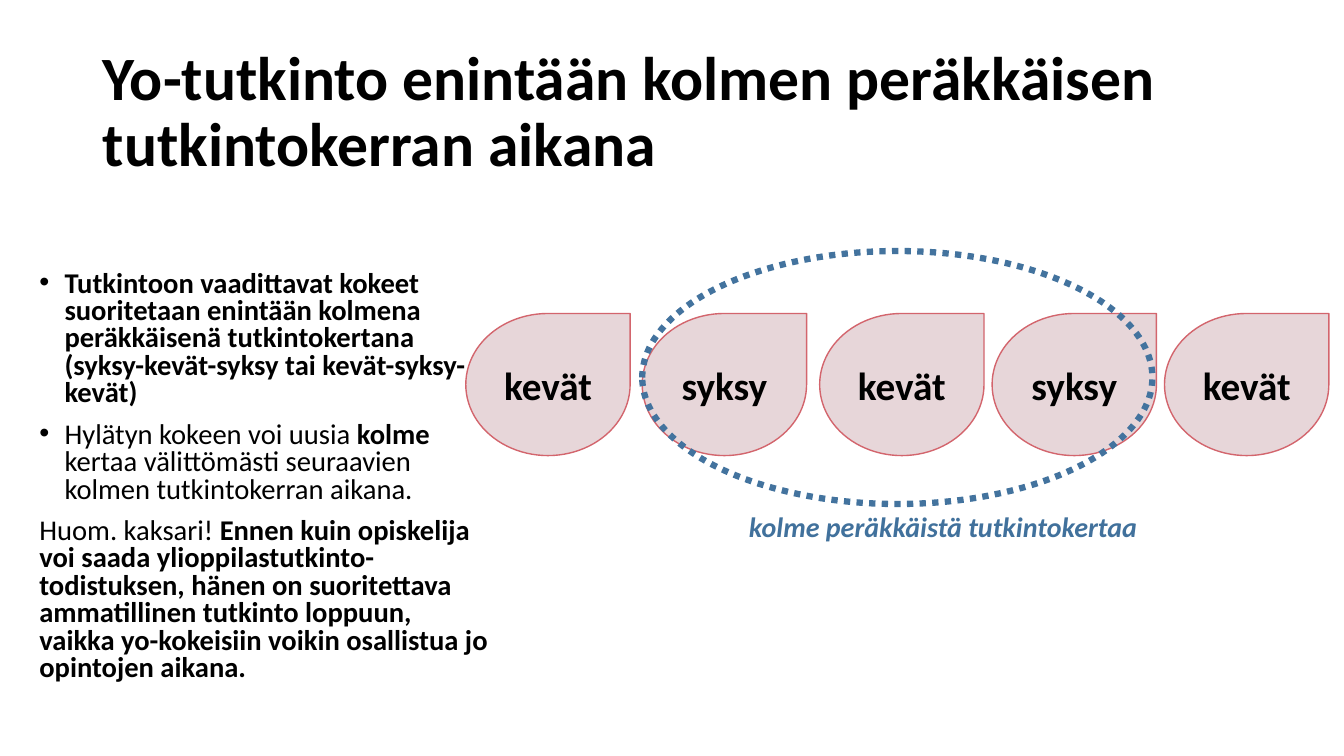
from lxml.etree import SubElement
from pptx import Presentation
from pptx.dml.color import RGBColor
from pptx.enum.dml import MSO_LINE
from pptx.enum.shapes import MSO_SHAPE
from pptx.enum.text import MSO_ANCHOR, MSO_AUTO_SIZE, PP_ALIGN
from pptx.oxml.ns import qn
from pptx.util import Emu, Pt

PX = 9144  # one px is a hundredth of an inch
FONT = "Calibri"
BLACK = RGBColor(0x00, 0x00, 0x00)
PINK = RGBColor(0xE7, 0xD6, 0xD9)
RED = RGBColor(0xD3, 0x65, 0x6D)
RING_BLUE = RGBColor(0x43, 0x73, 0x9E)
CAPTION_BLUE = RGBColor(0x41, 0x71, 0x9C)

TITLE = "Yo-tutkinto enintään kolmen peräkkäisen tutkintokerran aikana"
# Each rule: bulleted or not, then (text, bold) pieces
RULES = [
    (True, [("Tutkintoon vaadittavat kokeet suoritetaan enintään kolmena "
             "peräkkäisenä tutkintokertana (syksy-kevät-syksy tai "
             "kevät-syksy-kevät)", True)]),
    (True, [("Hylätyn kokeen voi uusia ", False), ("kolme ", True),
            ("kertaa välittömästi seuraavien kolmen tutkintokerran aikana.", False)]),
    (False, [("Huom. kaksari! ", False),
             ("Ennen kuin opiskelija voi saada ylioppilastutkinto-todistuksen, "
              "hänen on suoritettava ammatillinen tutkinto loppuun, vaikka "
              "yo-kokeisiin voikin osallistua jo opintojen aikana.", True)]),
]
TERMS = [(462, "kevät"), (637, "syksy"), (813, "kevät"), (984, "syksy"), (1155, "kevät")]


def box(*lengths):
    return [Emu(length * PX) for length in lengths]


def place(holder, *lengths):
    holder.left, holder.top, holder.width, holder.height = box(*lengths)


def style(paragraph, size, color=BLACK, bold=None, italic=None):
    font = paragraph.font
    font.name, font.size, font.bold, font.italic = FONT, Pt(size), bold, italic
    font.color.rgb = color


def set_bullet(paragraph, bulleted):
    indent = 25 * PX if bulleted else 0
    props = paragraph._p.get_or_add_pPr()
    props.set("marL", str(indent))
    props.set("indent", str(-indent))
    if bulleted:
        SubElement(props, qn("a:buFont"), typeface="Arial")
        SubElement(props, qn("a:buChar"), char="•")
    else:
        SubElement(props, qn("a:buNone"))


def fill_title(title):
    place(title, 92, 40, 1150, 145)
    frame = title.text_frame
    frame.text = TITLE
    frame.auto_size = MSO_AUTO_SIZE.NONE
    frame.vertical_anchor = MSO_ANCHOR.MIDDLE
    heading = frame.paragraphs[0]
    heading.alignment = PP_ALIGN.LEFT
    heading.line_spacing = 0.9
    style(heading, 44, bold=True)


def fill_rules(body):
    place(body, 29, 264, 466, 419)
    frame = body.text_frame
    frame.auto_size = MSO_AUTO_SIZE.NONE
    frame.vertical_anchor = MSO_ANCHOR.TOP
    for index, (bulleted, pieces) in enumerate(RULES):
        rule = frame.add_paragraph() if index else frame.paragraphs[0]
        set_bullet(rule, bulleted)
        rule.line_spacing = 0.8
        rule.space_before = Pt(10 if index else 0)
        style(rule, 20.4)
        for text, bold in pieces:
            piece = rule.add_run()
            piece.text = text
            piece.font.bold = bold


def add_term(slide, left, season):
    drop = slide.shapes.add_shape(MSO_SHAPE.TEAR, *box(left, 311, 163, 141))
    drop.shadow.inherit = False
    drop.fill.solid()
    drop.fill.fore_color.rgb = PINK
    drop.line.color.rgb = RED
    drop.line.width = Pt(1)
    frame = drop.text_frame
    frame.text = season
    frame.vertical_anchor = MSO_ANCHOR.MIDDLE
    label = frame.paragraphs[0]
    label.alignment = PP_ALIGN.CENTER
    style(label, 28, bold=True)


def add_ring(slide):
    ring = slide.shapes.add_shape(MSO_SHAPE.OVAL, *box(637, 249, 506, 251))
    ring.shadow.inherit = False
    ring.fill.background()
    ring.line.color.rgb = RING_BLUE
    ring.line.width = Pt(4.5)
    ring.line.dash_style = MSO_LINE.ROUND_DOT


def add_caption(slide, text):
    frame = slide.shapes.add_textbox(*box(733, 501, 411, 44)).text_frame
    frame.word_wrap = True
    frame.text = text
    style(frame.paragraphs[0], 20, CAPTION_BLUE, bold=True, italic=True)


def main():
    deck = Presentation()
    deck.slide_width, deck.slide_height = box(1333, 750)
    slide = deck.slides.add_slide(deck.slide_layouts[1])

    # Title and rules
    fill_title(slide.shapes.title)
    fill_rules(slide.placeholders[1])

    # Row of exam terms, with three of them ringed
    for left, season in TERMS:
        add_term(slide, left, season)
    add_ring(slide)
    add_caption(slide, "kolme peräkkäistä tutkintokertaa")

    deck.save("out.pptx")


if __name__ == "__main__":
    main()
